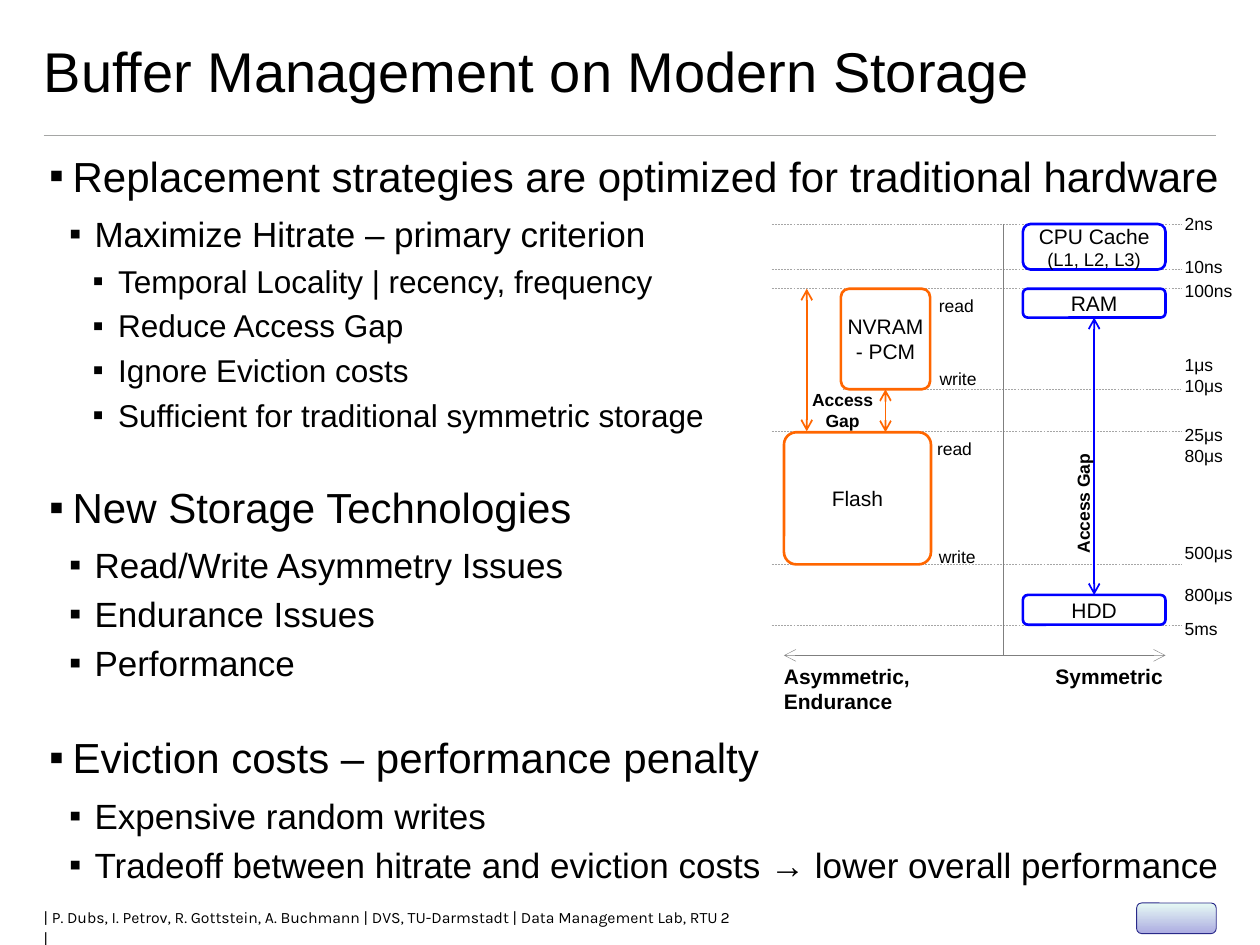
from dataclasses import dataclass
from typing import NamedTuple

from lxml import etree
from pptx import Presentation
from pptx import util as u
from pptx.dml.color import RGBColor
from pptx.enum import dml, shapes, text
from pptx.oxml import ns

Pt = u.Pt
LEFT, CENTER, RIGHT = text.PP_ALIGN.LEFT, text.PP_ALIGN.CENTER, text.PP_ALIGN.RIGHT


@dataclass(frozen=True)
class Theme:
    font: str = "Arial"
    footer_font: str = "Karla"
    ink: str = "000000"
    rule: str = "A5A6A5"
    grid: str = "A6A6A6"
    axis: str = "7F7F7F"
    symmetric: str = "0000FF"
    asymmetric: str = "FF6600"
    title: float = 32
    levels: tuple = (24, 20, 18)
    device: float = 12
    detail: float = 10.5
    label: float = 10
    footer: float = 9


class Level(NamedTuple):
    margin: float
    hang: float
    before: float
    after: float
    spacing: float


class Device(NamedTuple):
    lines: tuple
    x: float
    y: float
    w: float
    h: float
    color: str
    corner: float = 0.167


class Label(NamedTuple):
    lines: tuple
    x: float
    y: float
    w: float
    fmt: dict = {}


T = Theme()
LEVELS = (Level(16.5, 13.5, 24.6, 3, 1.1),
          Level(29, 14.5, 3.9, 0, 1),
          Level(42.5, 14.5, 3.9, 0, 1))
BULLETS = (
    (0, "Replacement strategies are optimized for traditional hardware"),
    (1, "Maximize Hitrate – primary criterion"),
    (2, "Temporal Locality | recency, frequency"),
    (2, "Reduce Access Gap"),
    (2, "Ignore Eviction costs"),
    (2, "Sufficient for traditional symmetric storage"),
    (0, "New Storage Technologies"),
    (1, "Read/Write Asymmetry Issues"),
    (1, "Endurance Issues"),
    (1, "Performance"),
    (0, "Eviction costs – performance penalty"),
    (1, "Expensive random writes"),
    (1, "Tradeoff between hitrate and eviction costs → lower overall performance"),
)

GRID_LEFT, GRID_RIGHT, SCALE_X = 441, 675, 677
GRID_Y = (128, 154, 165, 246.5, 322.5, 357)
SYM_X, SYM_W = 584.5, 81.5
DEVICES = {
    "cache": Device(("CPU Cache", "(L1, L2, L3)"), SYM_X, 128, SYM_W, 26, T.symmetric),
    "ram": Device(("RAM",), SYM_X, 165, SYM_W, 16.5, T.symmetric),
    "hdd": Device(("HDD",), SYM_X, 340, SYM_W, 17, T.symmetric),
    "flash": Device(("Flash",), 448, 247, 84, 75.5, T.asymmetric, 0.093),
    "nvram": Device(("NVRAM", "- PCM"), 480.5, 165, 51, 57.5, T.asymmetric, 0.093),
}
BOLD = {"bold": True}
HEADING = {"bold": True, "size": T.device}
LABELS = (
    Label(("2ns",), SCALE_X, 121.5, 17),
    Label(("10ns",), SCALE_X, 146, 22),
    Label(("100ns",), SCALE_X, 160, 27),
    Label(("1μs", "10μs"), SCALE_X, 202.5, 22),
    Label(("25μs", "80μs"), SCALE_X, 242.5, 22),
    Label(("500μs",), SCALE_X, 309.5, 27),
    Label(("800μs",), SCALE_X, 333.5, 27),
    Label(("5ms",), SCALE_X, 353, 19),
    Label(("read",), 536.5, 168.5, 20),
    Label(("write",), 537, 210.5, 21.5),
    Label(("read",), 535.5, 250.5, 20),
    Label(("write",), 536.5, 312, 21.5),
    Label(("Access", "Gap"), 461, 222.5, 41, {"bold": True, "align": CENTER}),
    Label(("Symmetric",), 602.5, 379, 62, {**HEADING, "align": RIGHT}),
    Label(("Asymmetric,", "Endurance"), 448, 379, 102, HEADING),
)


def rgb(value: str) -> RGBColor:
    return RGBColor.from_string(value)


def write(p, content: str, *, size: float = T.label, font: str = T.font,
          bold: bool = False, align=LEFT) -> None:
    p.alignment = align
    r = p.add_run()
    r.text = content
    r.font.size, r.font.name, r.font.bold = Pt(size), font, bold
    r.font.color.rgb = rgb(T.ink)


def prepare(tf, *, wrap: bool = True, anchor=text.MSO_ANCHOR.TOP):
    tf.margin_left = tf.margin_right = tf.margin_top = tf.margin_bottom = 0
    tf.auto_size = text.MSO_AUTO_SIZE.NONE
    tf.word_wrap, tf.vertical_anchor = wrap, anchor
    return tf


def paragraph(tf, index: int):
    return tf.add_paragraph() if index else tf.paragraphs[0]


def add_text(s, lines: tuple, x: float, y: float, w: float, h: float,
             wrap: bool = False, spacing: float = 1, **fmt):
    sp = s.shapes.add_textbox(Pt(x), Pt(y), Pt(w), Pt(h))
    tf = prepare(sp.text_frame, wrap=wrap)
    for i, line in enumerate(lines):
        p = paragraph(tf, i)
        p.line_spacing = spacing
        write(p, line, **fmt)
    return sp


def add_line(s, x1: float, y1: float, x2: float, y2: float, color: str,
             width: float = 0.25, dashed: bool = False, arrows: bool = False):
    c = s.shapes.add_connector(shapes.MSO_CONNECTOR.STRAIGHT, Pt(x1), Pt(y1), Pt(x2), Pt(y2))
    c.line.color.rgb, c.line.width = rgb(color), Pt(width)
    if dashed:
        c.line.dash_style = dml.MSO_LINE.DASH
    if arrows:
        for end in ("a:headEnd", "a:tailEnd"):
            etree.SubElement(c.line._get_or_add_ln(), ns.qn(end), type="arrow")
    etree.SubElement(c._element.spPr, ns.qn("a:effectLst"))
    return c


def add_round_rect(s, x: float, y: float, w: float, h: float, color: str, width: float):
    sp = s.shapes.add_shape(shapes.MSO_SHAPE.ROUNDED_RECTANGLE, Pt(x), Pt(y), Pt(w), Pt(h))
    sp.shadow.inherit = False
    sp.line.color.rgb, sp.line.width = rgb(color), Pt(width)
    return sp


def add_device(s, d: Device):
    sp = add_round_rect(s, d.x, d.y, d.w, d.h, d.color, 1.5)
    sp.adjustments[0] = d.corner
    sp.fill.solid()
    sp.fill.fore_color.rgb = rgb("FFFFFF")
    tf = prepare(sp.text_frame, anchor=text.MSO_ANCHOR.MIDDLE)
    for i, line in enumerate(d.lines):
        size = T.detail if line.startswith("(") else T.device
        write(paragraph(tf, i), line, size=size, align=CENTER)
    return sp


def add_bullets(s) -> None:
    tf = prepare(s.shapes.add_textbox(Pt(25), Pt(83), Pt(680.5), Pt(408)).text_frame)
    for i, (depth, line) in enumerate(BULLETS):
        level, p = LEVELS[depth], paragraph(tf, i)
        p.level = depth
        pPr = p._p.get_or_add_pPr()
        pPr.set("marL", str(Pt(level.margin)))
        pPr.set("indent", str(-Pt(level.hang)))
        etree.SubElement(pPr, ns.qn("a:buFont"), typeface=T.font)
        etree.SubElement(pPr, ns.qn("a:buChar"), char="▪")
        p.space_before = Pt(level.before if i else 0)
        p.space_after, p.line_spacing = Pt(level.after), level.spacing
        write(p, line, size=T.levels[depth])


def add_frame(s) -> None:
    """Title, rule, footer and badge."""
    title = s.shapes.title
    title.left, title.top, title.width, title.height = Pt(25), Pt(21), Pt(584), Pt(51)
    write(prepare(title.text_frame).paragraphs[0], "Buffer Management on Modern Storage", size=T.title)
    add_line(s, 25, 77, 695, 77, T.rule)
    footer = {"size": T.footer, "font": T.footer_font, "wrap": True, "spacing": 1.1}
    add_text(s, ("| P. Dubs, I. Petrov, R. Gottstein, A. Buchmann | DVS, TU-Darmstadt"
                 " | Data Management Lab, RTU |",), 25, 517.5, 388, 16.5, **footer)
    add_text(s, ("2",), 399.5, 517.5, 17.5, 11.5, align=RIGHT, **footer)
    badge = add_round_rect(s, 649.5, 516, 45.5, 17.5, "292989", 0.5)
    badge.fill.gradient()
    badge.fill.gradient_angle = 90
    for stop, color in zip(badge.fill.gradient_stops, ("ACACE1", "E7FAF5")):
        stop.color.rgb = rgb(color)


def add_diagram(s) -> None:
    for y in GRID_Y:
        add_line(s, GRID_LEFT, y, GRID_RIGHT, y, T.grid, dashed=True)
    add_line(s, 481.5, 222.5, GRID_RIGHT, 222.5, T.grid, dashed=True)
    add_line(s, 573, 374.5, 573, 128, T.axis)
    add_line(s, 448, 374.5, 666, 374.5, T.axis, arrows=True)
    device = {name: add_device(s, d) for name, d in DEVICES.items()}
    gap = add_line(s, 625, 181.5, 625, 340, T.symmetric, 1, arrows=True)
    gap.begin_connect(device["ram"], 2)
    gap.end_connect(device["hdd"], 0)
    gap = add_line(s, 506, 222.5, 506, 247, T.asymmetric, 1, arrows=True)
    gap.begin_connect(device["nvram"], 2)
    add_line(s, 461, 165, 461, 246.5, T.asymmetric, 1, arrows=True)
    for label in LABELS:
        height = 1.2 * label.fmt.get("size", T.label) * len(label.lines)
        add_text(s, label.lines, label.x, label.y, label.w, height, **label.fmt)
    add_text(s, ("Access Gap",), 590, 281.5, 57.5, 12, **BOLD).rotation = 270


def main() -> None:
    prs = Presentation()
    prs.slide_width, prs.slide_height = Pt(720), Pt(540)
    s = prs.slides.add_slide(prs.slide_layouts[5])
    add_frame(s)
    add_bullets(s)
    add_diagram(s)
    prs.save("out.pptx")


if __name__ == "__main__":
    main()
